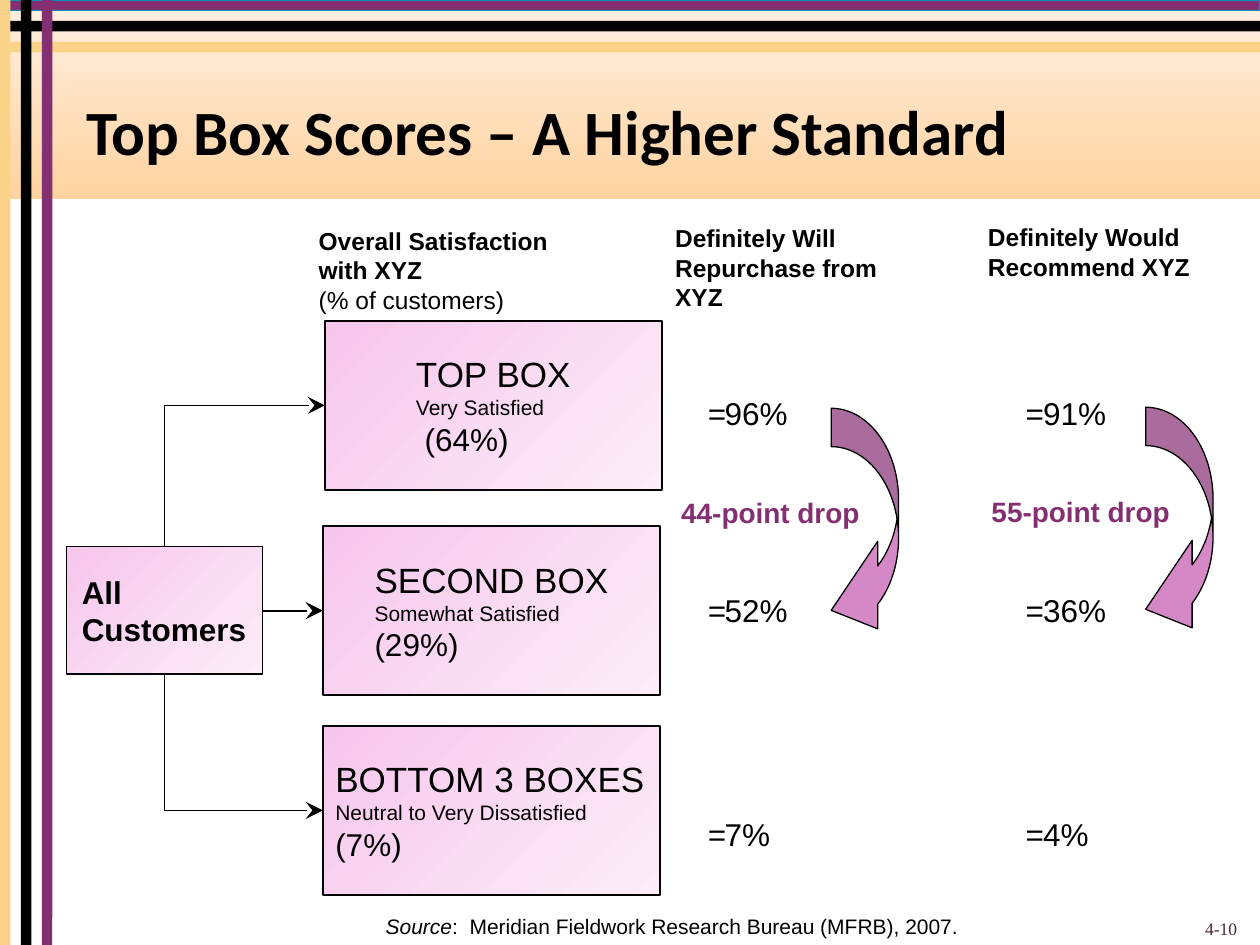
from lxml import etree
from pptx import Presentation
from pptx.dml import color
from pptx.enum import shapes, text
from pptx.oxml import ns
from pptx.util import Pt

# Content
TITLE = "Top Box Scores – A Higher Standard"
ROOT = "All Customers"
BOXES = [  # left, top, text inset, lines
    (185.7, 183.4, 52, ["TOP BOX", "Very Satisfied", " (64%)"]),
    (184.5, 300.7, 29.5, ["SECOND BOX", "Somewhat Satisfied", "(29%)"]),
    (184.5, 414.8, 7.2, ["BOTTOM 3 BOXES", "Neutral to Very Dissatisfied", "(7%)"]),
]
HEADINGS = [  # left, top, width, paragraphs of (text, bold)
    (175, 125.5, 205, [("Overall Satisfaction", True), ("with XYZ", True),
                       ("(% of customers)", False)]),
    (378.7, 124, 152, [("Definitely Will Repurchase from\vXYZ", True)]),
    (557.5, 123.5, 147, [("Definitely Would Recommend XYZ", True)]),
]
RESULTS = [  # equals left, value left, drop left, arrow left, rise, drop text, values
    (397.5, 407, 382.2, 475, 0, "44-point drop", ["96%", "52%", "7%"]),
    (579, 589, 559.5, 654.7, 0.6, "55-point drop", ["91%", "36%", "4%"]),
]
RESULT_TOPS = [221.5, 334, 462.3]
SOURCE = [("Source", True), (":  Meridian Fieldwork Research Bureau (MFRB), 2007.", False)]
PAGE_NUMBER = "4-10"

THEME = {
    "plum": "852F73", "gold": "FBD388", "black": "000000", "white": "FFFFFF",
    "teal": "0391BD", "arrow": "D488C5", "number": "51253A",
    "header": ("FFD3A0", "FFF0E3"), "box": ("F6C6EC", "FCEDF8"),
    "body": "Arial", "heading": "Calibri", "serif": "Times New Roman",
    "title_size": 36, "box_sizes": (20, 12, 18), "value_size": 18,
    "drop_size": 16, "heading_size": 14, "source_size": 12, "number_size": 10,
}
WIDTH, HEIGHT = 720, 540
BAND, BAND_STEP = 6, 12
BOX_WIDTH, BOX_HEIGHT = 192.5, 96.5
ROOT_LEFT, ROOT_TOP, ROOT_WIDTH, ROOT_HEIGHT = 38, 312.3, 112, 73

deck = Presentation()
deck.slide_width, deck.slide_height = Pt(WIDTH), Pt(HEIGHT)
page = deck.slides.add_slide(deck.slide_layouts[5])


def rgb(name):
    return color.RGBColor.from_string(THEME[name])


def write(para, words, size, font="body", ink="black", bold=False, italic=False):
    """Append words to a paragraph; a vertical tab makes a line break."""
    for index, part in enumerate(words.split("\v")):
        if index:
            para.add_line_break()
        span = para.add_run()
        span.text = part
        span.font.size, span.font.name = Pt(size), THEME[font]
        span.font.bold, span.font.italic = bold, italic
        span.font.color.rgb = rgb(ink)


def paragraphs(frame, count):
    return [frame.paragraphs[0]] + [frame.add_paragraph() for _ in range(count - 1)]


def text_box(left, top, width, height):
    box = page.shapes.add_textbox(Pt(left), Pt(top), Pt(width), Pt(height))
    box.text_frame.word_wrap = True
    return box.text_frame


def label(left, top, width, height, words, size, **style):
    frame = text_box(left, top, width, height)
    write(frame.paragraphs[0], words, size, **style)
    return frame


def shape(left, top, width, height, fill, line=None, weight=1,
          kind=shapes.MSO_SHAPE.RECTANGLE, angle=0):
    item = page.shapes.add_shape(kind, Pt(left), Pt(top), Pt(width), Pt(height))
    item.shadow.inherit = False
    if isinstance(THEME[fill], tuple):
        item.fill.gradient()
        item.fill.gradient_angle = angle
        for stop, value in zip(item.fill.gradient_stops, THEME[fill]):
            stop.color.rgb = color.RGBColor.from_string(value)
    else:
        item.fill.solid()
        item.fill.fore_color.rgb = rgb(fill)
    if line:
        item.line.color.rgb = rgb(line)
        item.line.width = Pt(weight)
    else:
        item.line.fill.background()
    return item


def node(left, top, width, height, lines, inset=7.2, bold=False):
    frame = shape(left, top, width, height, "box", "black", angle=315).text_frame
    frame.word_wrap = True
    frame.vertical_anchor = text.MSO_ANCHOR.MIDDLE
    frame.margin_left, frame.margin_right = Pt(inset), Pt(5)
    for para, (words, size) in zip(paragraphs(frame, len(lines)), lines):
        para.alignment = text.PP_ALIGN.LEFT
        write(para, words, size, bold=bold)


def arrow(x1, y1, x2, y2, bent=False):
    kind = shapes.MSO_CONNECTOR.STRAIGHT
    start, end = (x1, y1), (x2, y2)
    if bent:  # one corner: vertical first, so the frame is turned by 270 degrees
        kind = shapes.MSO_CONNECTOR.ELBOW
        mid_x, mid_y = (x1 + x2) / 2, (y1 + y2) / 2
        half_w, half_h = (y1 - y2) / 2, (x2 - x1) / 2
        start, end = (mid_x - half_w, mid_y - half_h), (mid_x + half_w, mid_y + half_h)
    link = page.shapes.add_connector(kind, *(Pt(v) for v in start + end))
    link.line.color.rgb, link.line.width = rgb("black"), Pt(1)
    props = link._element.spPr
    if bent:
        props.find(ns.qn("a:xfrm")).set("rot", "16200000")
        props.find(ns.qn("a:prstGeom")).set("prst", "bentConnector2")
    etree.SubElement(props.find(ns.qn("a:ln")), ns.qn("a:tailEnd"),
                     type="stealth", w="lg", len="lg")
    etree.SubElement(props, ns.qn("a:effectLst"))


# Header and crossing bands
shape(0, 0, WIDTH, 113.5, "header", angle=90)
shape(0, 0, WIDTH, BAND, "plum", "teal", 0)
for slot, fill in ((2, "gold"), (1, "black")):
    shape(0, slot * BAND_STEP, WIDTH, BAND, fill)
for slot, fill in ((2, "plum"), (0, "gold"), (1, "black")):
    shape(slot * BAND_STEP, 0, BAND, HEIGHT, fill)

# Title, raised above the header
title = page.shapes.title
title.left, title.top, title.width, title.height = Pt(42), Pt(42), Pt(666), Pt(72)
title.text_frame.auto_size = text.MSO_AUTO_SIZE.NONE
title.text_frame.vertical_anchor = text.MSO_ANCHOR.MIDDLE
title_para = title.text_frame.paragraphs[0]
title_para.alignment, title_para.line_spacing = text.PP_ALIGN.LEFT, 0.85
write(title_para, TITLE, THEME["title_size"], font="heading", bold=True)
page.shapes._spTree.append(title._element)

# Customer tree
node(ROOT_LEFT, ROOT_TOP, ROOT_WIDTH, ROOT_HEIGHT, [(ROOT, THEME["value_size"])],
     inset=8.7, bold=True)
root_x = ROOT_LEFT + ROOT_WIDTH / 2
for left, top, inset, lines in BOXES:
    node(left, top, BOX_WIDTH, BOX_HEIGHT, list(zip(lines, THEME["box_sizes"])), inset)
    middle = top + BOX_HEIGHT / 2
    if middle < ROOT_TOP:
        arrow(root_x, ROOT_TOP, left, middle, bent=True)
    elif middle > ROOT_TOP + ROOT_HEIGHT:
        arrow(root_x, ROOT_TOP + ROOT_HEIGHT, left, middle, bent=True)
    else:
        arrow(ROOT_LEFT + ROOT_WIDTH, middle, left, middle)

# Column headings
for left, top, width, lines in HEADINGS:
    frame = text_box(left, top, width, 74 if len(lines) == 1 else 54)
    for para, (words, bold) in zip(paragraphs(frame, len(lines)), lines):
        write(para, words, THEME["heading_size"], bold=bold)

# Result columns
for equals_x, value_x, drop_x, arrow_x, rise, drop, values in RESULTS:
    for top, value in zip(RESULT_TOPS, values):
        label(equals_x, top, 25, 29, "=", THEME["value_size"])
        label(value_x, top, 87, 29, value, THEME["value_size"])
    label(drop_x, 279.6 - rise, 122, 26.5, drop, THEME["drop_size"], ink="plum", bold=True)
    curve = shape(arrow_x, 233.3 - rise, 38.5, 140.5, "arrow", "black", 0.75,
                  shapes.MSO_SHAPE.CURVED_LEFT_ARROW)
    for index, value in enumerate((0.57, 1.3, 0.69)):
        curve.adjustments[index] = value

# Source and page number
shape(30, 524, 687, 16, "white")
source = text_box(213.3, 518.5, 351.5, 21.5)
source.word_wrap = False
for words, italic in SOURCE:
    write(source.paragraphs[0], words, THEME["source_size"], italic=italic)
number = label(546, 504, 168, 36, PAGE_NUMBER, THEME["number_size"],
               font="serif", ink="number")
number.vertical_anchor = text.MSO_ANCHOR.BOTTOM
number.paragraphs[0].alignment = text.PP_ALIGN.RIGHT

deck.save("out.pptx")
